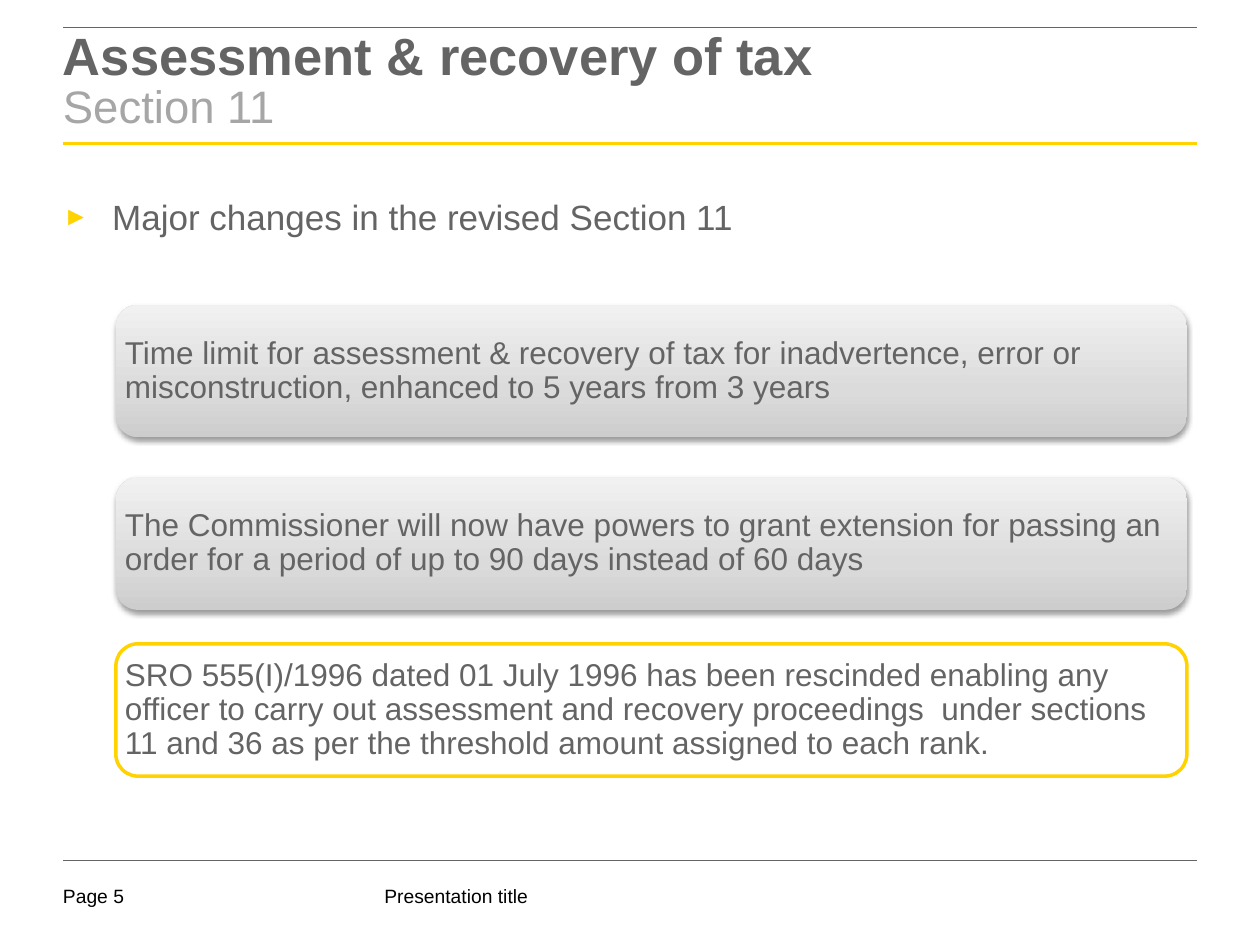
from lxml import etree
from pptx import Presentation
from pptx.dml.color import RGBColor
from pptx.enum import shapes, text
from pptx.oxml import parse_xml
from pptx.oxml.ns import nsdecls, qn
from pptx.util import Emu, Pt


class Theme:
    font = "Arial"
    grey, pale, gold = "646464", "A6A6A6", "FFD200"
    black, white = "000000", "FFFFFF"
    ramp = ((0, "CDCDCD"), (35, "DBDBDB"), (100, "F1F1F1"))
    head, sub, body, card, foot = 30, 26, 20, 18, 11


def px(n):
    """100 px to the inch."""
    return Emu(n * 9144)


def rgb(code):
    return RGBColor.from_string(code)


def style(run, size, color, bold=False):
    font = run.font
    font.name, font.size, font.bold = Theme.font, Pt(size), bold
    font.color.rgb = rgb(color)


def inset(frame, x=0, y=0):
    frame.word_wrap = True
    frame.margin_left = frame.margin_right = px(x)
    frame.margin_top = frame.margin_bottom = px(y)


def label(slide, box, words, size, color):
    frame = slide.shapes.add_textbox(*map(px, box)).text_frame
    inset(frame)
    frame.text = words
    para = frame.paragraphs[0]
    style(para.runs[0], size, color)
    return para


def rule(slide, x, y, w, color, width):
    line = slide.shapes.add_connector(
        shapes.MSO_CONNECTOR.STRAIGHT, px(x), px(y), px(x + w), px(y))
    line.line.color.rgb = rgb(color)
    line.line.width = Pt(width)
    etree.SubElement(line._element.spPr, qn("a:effectLst"))


def header(slide, box):
    x, y, w, h = box
    rule(slide, x, y, w, Theme.grey, 0.5)
    rule(slide, x, y + 92, w, Theme.gold, 1.5)
    para = label(slide, (x, y + 4, w, h - 4),
                 "Assessment & recovery of tax\vSection 11",
                 Theme.head, Theme.grey)
    para.line_spacing = 0.85
    title, sub = para.runs
    style(title, Theme.head, Theme.grey, True)
    style(sub, Theme.sub, Theme.pale)


def bullet(slide, box, words):
    para = label(slide, box, words, Theme.body, Theme.grey)
    props = para._p.get_or_add_pPr()
    props.set("marL", str(px(39)))
    props.set("indent", str(px(-39)))
    color = etree.SubElement(props, qn("a:buClr"))
    etree.SubElement(color, qn("a:srgbClr"), val=Theme.gold)
    etree.SubElement(props, qn("a:buSzPct"), val="75000")
    etree.SubElement(props, qn("a:buFont"), typeface=Theme.font)
    etree.SubElement(props, qn("a:buChar"), char="►")


def shade(card):
    """Grey ramp, dark at the foot, with a soft shadow below."""
    props = card._element.spPr
    stops = "".join(
        f'<a:gs pos="{pos * 1000}"><a:srgbClr val="{code}"/></a:gs>'
        for pos, code in Theme.ramp)
    props.find(qn("a:prstGeom")).addnext(parse_xml(
        f'<a:gradFill {nsdecls("a")} rotWithShape="1"><a:gsLst>{stops}</a:gsLst>'
        '<a:lin ang="16200000" scaled="0"/></a:gradFill>'))
    props.find(qn("a:effectLst")).append(parse_xml(
        f'<a:outerShdw {nsdecls("a")} blurRad="40000" dist="20000" dir="5400000"'
        f' rotWithShape="0"><a:srgbClr val="{Theme.black}"><a:alpha val="38000"/>'
        '</a:srgbClr></a:outerShdw>'))


def panel(slide, box, words, framed):
    card = slide.shapes.add_shape(
        shapes.MSO_SHAPE.ROUNDED_RECTANGLE, *map(px, box))
    card.shadow.inherit = False
    if framed:
        card.fill.solid()
        card.fill.fore_color.rgb = rgb(Theme.white)
        card.line.color.rgb = rgb(Theme.gold)
        card.line.width = Pt(2)
    else:
        card.line.fill.background()
        shade(card)
    frame = card.text_frame
    inset(frame, 2, 2)
    frame.vertical_anchor = text.MSO_ANCHOR.MIDDLE
    frame.text = words
    para = frame.paragraphs[0]
    para.alignment = text.PP_ALIGN.LEFT
    para.line_spacing = 0.9
    style(para.runs[0], Theme.card, Theme.grey)


def content(slide, box):
    x, y, w, h = box
    bullet(slide, (x, y, w, 40), "Major changes in the revised Section 11")
    cards = (
        (87, "Time limit for assessment & recovery of tax for inadvertence, "
             "error or misconstruction, enhanced to 5 years from 3 years", False),
        (224, "The Commissioner will now have powers to grant extension for passing "
              "an order for a period of up to 90 days instead of 60 days", False),
        (356, "SRO 555(I)/1996 dated 01 July 1996 has been rescinded enabling any "
              "officer to carry out assessment and recovery proceedings  under "
              "sections 11 and 36 as per the threshold amount assigned to each "
              "rank.", True),
    )
    for top, words, framed in cards:
        panel(slide, (x + 42, y + top, w - 42, 105), words, framed)


def footer(slide, box):
    x, y, w, h = box
    rule(slide, x, y, w, Theme.grey, 0.25)
    for left, width, words in ((0, 73, "Page 5"), (255, 225, "Presentation title")):
        label(slide, (x + left, y + 19, width, 22), words, Theme.foot, Theme.black)


def main():
    deck = Presentation()
    deck.slide_width, deck.slide_height = px(1000), px(750)
    slide = deck.slides.add_slide(deck.slide_layouts[6])
    header(slide, (50, 22, 900, 94))
    content(slide, (50, 155, 892, 494))
    footer(slide, (50, 683, 900, 41))
    deck.save("out.pptx")


if __name__ == "__main__":
    main()
